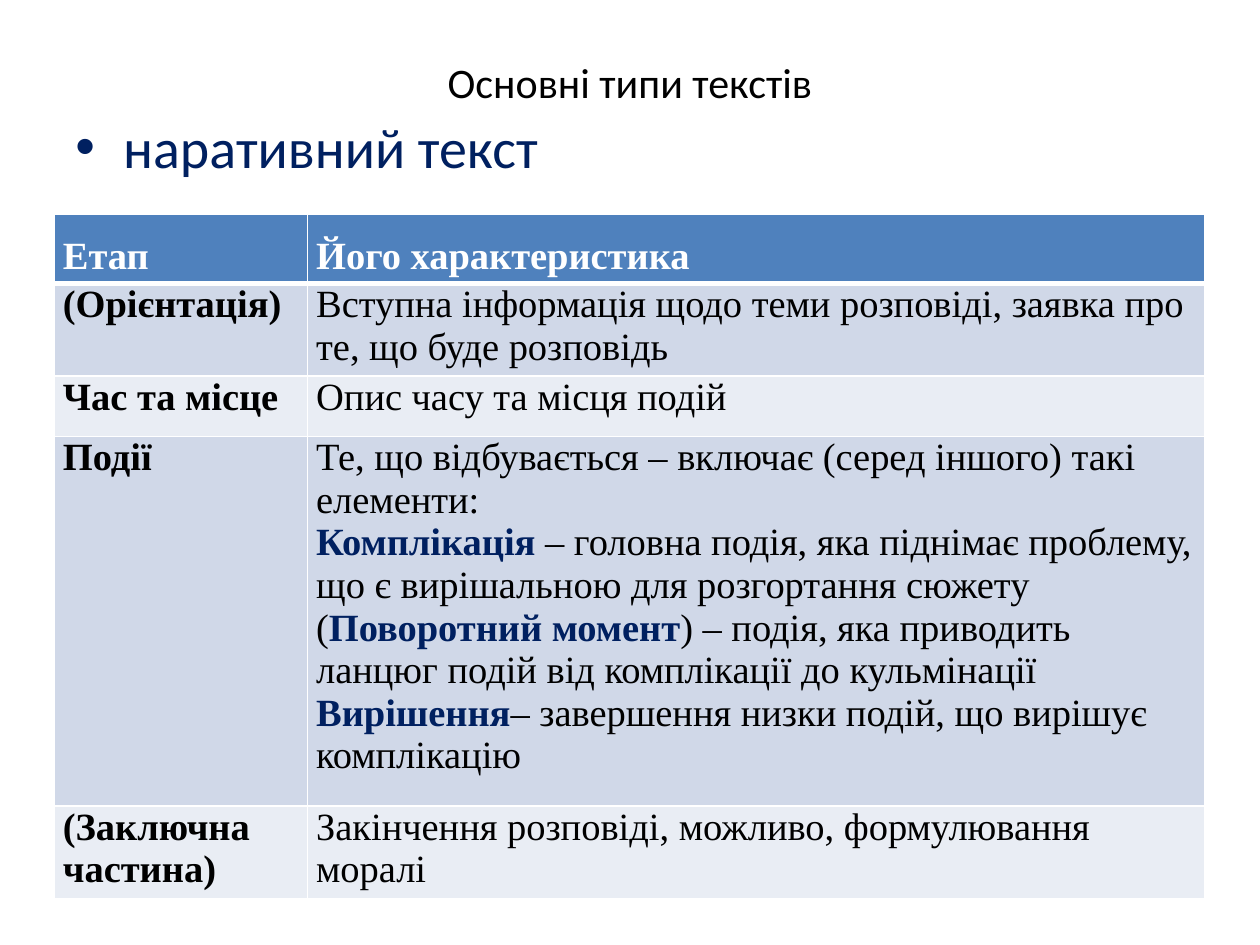
from dataclasses import dataclass

from lxml import etree
from pptx import Presentation
from pptx.dml.color import RGBColor
from pptx.enum.text import MSO_ANCHOR, PP_ALIGN
from pptx.oxml.ns import qn
from pptx.util import Inches, Pt

CENTER = PP_ALIGN.CENTER
TOP, MIDDLE = MSO_ANCHOR.TOP, MSO_ANCHOR.MIDDLE

COLORS = {
    "black": "000000",
    "white": "FFFFFF",
    "navy": "002060",
    "header": "4F81BD",
    "odd": "D0D8E8",
    "even": "E9EDF4",
}
COLUMN_WIDTHS = (2.01, 7.12)
ROW_HEIGHTS = (0.55, 0.48, 0.48, 2.48, 0.48)


@dataclass
class Run:
    text: str
    color: str = "black"
    bold: bool = False
    size: float = 22
    font: str = "Times New Roman"


@dataclass
class Stage:
    name: str
    paragraphs: list[list[Run]]


def term(text: str) -> Run:
    return Run(text, "navy", True)


STAGES = [
    Stage("(Орієнтація)", [[Run("Вступна інформація щодо теми розповіді, заявка про те, що буде розповідь")]]),
    Stage("Час та місце", [[Run("Опис часу та місця подій")]]),
    Stage("Події", [
        [Run("Те, що відбувається – включає (серед іншого) такі елементи:")],
        [term("Комплікація"),
         Run(" – головна подія, яка піднімає проблему, що є вирішальною для розгортання сюжету")],
        [Run("("), term("Поворотний момент"),
         Run(") – подія, яка приводить ланцюг подій від комплікації до кульмінації")],
        [term("Вирішення"), Run("– завершення низки подій, що вирішує комплікацію")],
    ]),
    Stage("(Заключна частина)", [[Run("Закінчення розповіді, можливо, формулювання моралі")]]),
]


def rgb(name: str) -> RGBColor:
    return RGBColor.from_string(COLORS[name])


def write(tf, paragraphs: list[list[Run]], **paragraph_format) -> None:
    for i, runs in enumerate(paragraphs):
        p = tf.add_paragraph() if i else tf.paragraphs[0]
        for name, value in paragraph_format.items():
            setattr(p, name, value)
        for run in runs:
            r = p.add_run()
            r.text = run.text
            for name, value in {"name": run.font, "size": Pt(run.size), "bold": run.bold}.items():
                setattr(r.font, name, value)
            r.font.color.rgb = rgb(run.color)


def add_text(s, box: tuple[float, ...], run: Run, anchor, **paragraph_format):
    tf = s.shapes.add_textbox(*map(Inches, box)).text_frame
    tf.word_wrap = True
    tf.vertical_anchor = anchor
    write(tf, [[run]], **paragraph_format)
    return tf.paragraphs[0]


def add_bullet(p, indent: float) -> None:
    pPr = p._p.get_or_add_pPr()
    pPr.set("marL", str(Inches(indent)))
    pPr.set("indent", str(-Inches(indent)))
    etree.SubElement(pPr, qn("a:buFont"), typeface="Arial")
    etree.SubElement(pPr, qn("a:buChar"), char="•")


def set_border(tcPr, side: str, width: float) -> None:
    line = etree.SubElement(tcPr, qn(f"a:{side}"), w=str(Pt(width)))
    fill = etree.SubElement(line, qn("a:solidFill"))
    etree.SubElement(fill, qn("a:srgbClr"), val=COLORS["white"])


def format_cell(cell, row: int, fill: str) -> None:
    margins = {"margin_left": 0.07, "margin_right": 0.07, "margin_top": 0, "margin_bottom": 0}
    for name, value in margins.items():
        setattr(cell, name, Inches(value))
    tcPr = cell._tc.get_or_add_tcPr()
    widths = {"lnL": 1, "lnR": 1, "lnT": 3 if row == 1 else 1, "lnB": 3 if row == 0 else 1}
    for side, width in widths.items():
        set_border(tcPr, side, width)
    cell.fill.solid()
    cell.fill.fore_color.rgb = rgb(fill)


def add_stage_table(s) -> None:
    table = s.shapes.add_table(
        len(ROW_HEIGHTS), len(COLUMN_WIDTHS), Inches(0.43), Inches(1.7),
        Inches(sum(COLUMN_WIDTHS)), Inches(sum(ROW_HEIGHTS))).table
    for column, width in zip(table.columns, COLUMN_WIDTHS):
        column.width = Inches(width)
    for row, height in zip(table.rows, ROW_HEIGHTS):
        row.height = Inches(height)

    for col, heading in enumerate(("Етап", "Його характеристика")):
        cell = table.cell(0, col)
        format_cell(cell, 0, "header")
        write(cell.text_frame, [[Run(heading, "white", True)]], line_spacing=1.5)
    for row, stage in enumerate(STAGES, start=1):
        for col, paragraphs in enumerate(([[Run(stage.name, bold=True)]], stage.paragraphs)):
            cell = table.cell(row, col)
            format_cell(cell, row, "odd" if row % 2 else "even")
            write(cell.text_frame, paragraphs)


def main() -> None:
    prs = Presentation()
    prs.slide_width, prs.slide_height = Inches(10), Inches(7.5)
    s = prs.slides.add_slide(prs.slide_layouts[6])
    add_text(s, (0.5, 0.3, 9, 0.69), Run("Основні типи текстів", size=24, font="Calibri"),
             MIDDLE, alignment=CENTER)
    subtitle = add_text(s, (0.5, 0.84, 9, 5.86),
                        Run("наративний текст", "navy", size=32, font="Calibri"),
                        TOP, space_before=Pt(6.4))
    add_bullet(subtitle, 0.38)
    add_stage_table(s)
    prs.save("out.pptx")


if __name__ == "__main__":
    main()
